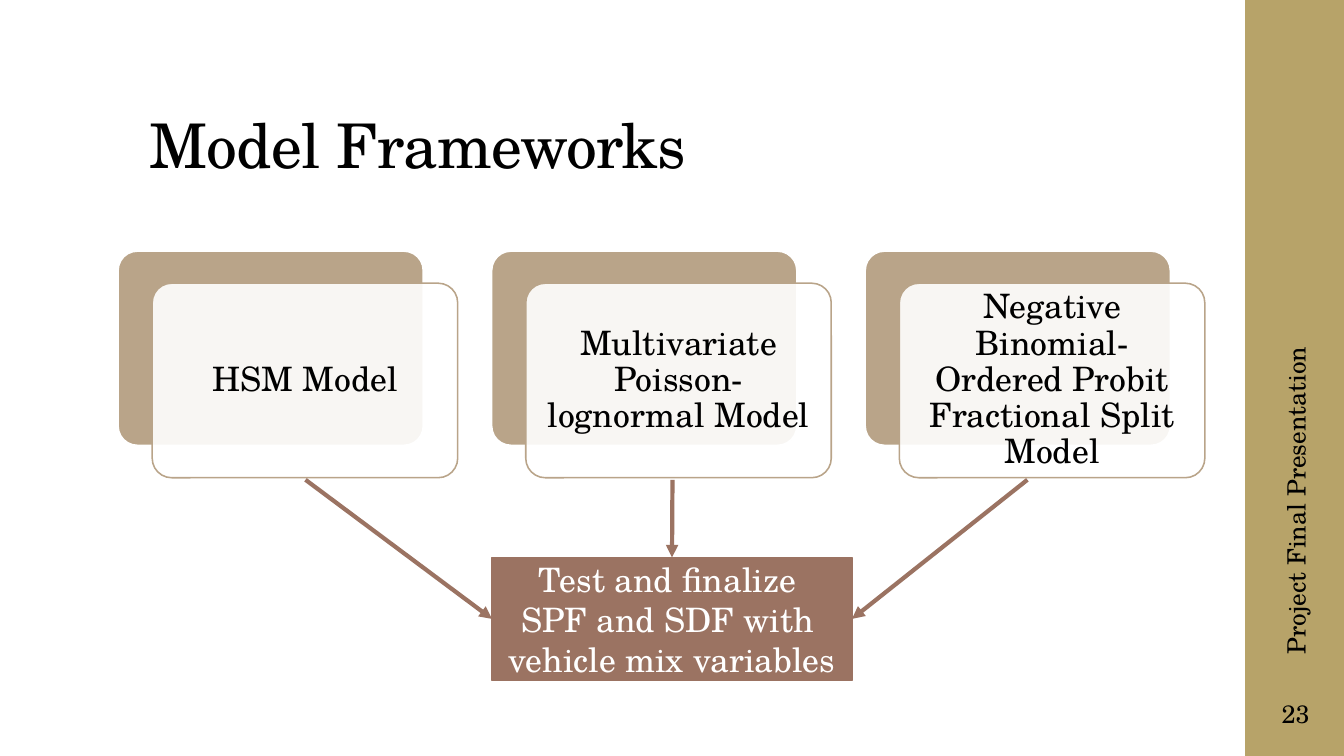
import pptx
import pptx.util
import pptx.dml.color
import pptx.enum.shapes
import pptx.enum.text
import pptx.oxml.ns
from lxml import etree

Inches = pptx.util.Inches
Shapes = pptx.enum.shapes.MSO_SHAPE
Align = pptx.enum.text.PP_ALIGN
Anchor = pptx.enum.text.MSO_ANCHOR
qn = pptx.oxml.ns.qn

# Content
TITLE = "Model Frameworks"
MODELS = [
    "HSM Model",
    "Multivariate Poisson-lognormal Model",
    "Negative Binomial- Ordered Probit Fractional Split Model",
]
RESULT = "Test and finalize \nSPF and SDF with \nvehicle mix variables"
FOOTER = "Project Final Presentation"
PAGE_NUMBER = "23"

# Style
FONT = "TeX Gyre Schola"
BLACK, WHITE = "000000", "FFFFFF"
GOLD, TAN, BROWN = "B7A369", "B9A489", "9B7362"

# Layout
CARD_LEFT, CARD_TOP, CARD_STEP = 1.17, 2.49, 3.705
CARD_WIDTH, CARD_HEIGHT = 3.03, 1.93
FRONT_SHIFT_X, FRONT_SHIFT_Y = 0.34, 0.32
RESULT_BOX = (4.88, 5.53, 3.57, 1.22)
ARROW_TOP = 4.76
ARROWS = [(3.03, 1), (10.19, 3), (6.67, 0)]  # start x, side of the result box


def color(hex_text):
    return pptx.dml.color.RGBColor.from_string(hex_text)


def write(shape, text, size, text_color, align=Align.LEFT,
          anchor=Anchor.MIDDLE, line_spacing=1.0, inset=None):
    frame = shape.text_frame
    frame.word_wrap = True
    frame.vertical_anchor = anchor
    if inset is not None:
        frame.margin_left = frame.margin_right = Inches(inset)
        frame.margin_top = frame.margin_bottom = Inches(inset)
    frame.text = text
    for paragraph in frame.paragraphs:
        paragraph.alignment = align
        paragraph.line_spacing = line_spacing
        for run in paragraph.runs:
            run.font.name = FONT
            run.font.size = pptx.util.Pt(size)
            run.font.color.rgb = color(text_color)


def add_box(slide, kind, box, fill, line=None, line_width=1.0):
    shape = slide.shapes.add_shape(kind, *map(Inches, box))
    shape.shadow.inherit = False
    shape.fill.solid()
    shape.fill.fore_color.rgb = color(fill)
    if line:
        shape.line.color.rgb = color(line)
        shape.line.width = pptx.util.Pt(line_width)
    else:
        shape.line.fill.background()
    return shape


def add_text(slide, box, *args, **options):
    shape = slide.shapes.add_textbox(*map(Inches, box))
    write(shape, *args, **options)
    return shape


def add_card(slide, left, text):
    back = add_box(slide, Shapes.ROUNDED_RECTANGLE,
                   (left, CARD_TOP, CARD_WIDTH, CARD_HEIGHT), TAN, WHITE, 1.35)
    front = add_box(slide, Shapes.ROUNDED_RECTANGLE,
                    (left + FRONT_SHIFT_X, CARD_TOP + FRONT_SHIFT_Y,
                     CARD_WIDTH, CARD_HEIGHT), WHITE, TAN, 1.1)
    for shape in (back, front):
        shape.adjustments[0] = 0.1
    fill_color = front.fill._xPr.find(qn("a:solidFill"))[0]
    etree.SubElement(fill_color, qn("a:alpha"), val="90000")
    write(front, text, 24, BLACK, Align.CENTER, line_spacing=0.9, inset=0.1)


def add_arrow(slide, start_x, target, side):
    start = Inches(start_x), Inches(ARROW_TOP)
    arrow = slide.shapes.add_connector(
        pptx.enum.shapes.MSO_CONNECTOR.STRAIGHT, *start, *start)
    arrow.end_connect(target, side)
    arrow.line.color.rgb = color(BROWN)
    arrow.line.width = pptx.util.Pt(3)
    etree.SubElement(arrow.line._get_or_add_ln(), qn("a:tailEnd"), type="triangle")
    etree.SubElement(arrow._element.spPr, qn("a:effectLst"))


def main():
    presentation = pptx.Presentation()
    presentation.slide_width = Inches(13.33)
    presentation.slide_height = Inches(7.5)
    slide = presentation.slides.add_slide(presentation.slide_layouts[6])

    # Side band
    add_box(slide, Shapes.RECTANGLE, (12.35, 0, 1, 7.5), GOLD)

    # Model cards
    for index, model in enumerate(MODELS):
        add_card(slide, CARD_LEFT + index * CARD_STEP, model)

    # Title
    title = add_text(slide, (1.38, 0.4, 10.6, 1.45), TITLE, 44, BLACK,
                     anchor=Anchor.BOTTOM, line_spacing=0.9)
    title.text_frame.paragraphs[0].runs[0].font._element.set("spc", "-50")

    # Result box and arrows
    result = add_box(slide, Shapes.FLOWCHART_PROCESS, RESULT_BOX, BROWN, BROWN)
    write(result, RESULT, 24, WHITE, Align.CENTER)
    for start_x, side in ARROWS:
        add_arrow(slide, start_x, result, side)

    # Footer and page number
    footer = add_text(slide, (10.89, 4.43, 3.92, 0.4), FOOTER, 18, BLACK)
    footer.rotation = 270
    add_text(slide, (12.35, 6.75, 1, 0.65), PAGE_NUMBER, 18, BLACK,
             Align.CENTER, inset=0.05)

    presentation.save("out.pptx")


if __name__ == "__main__":
    main()
